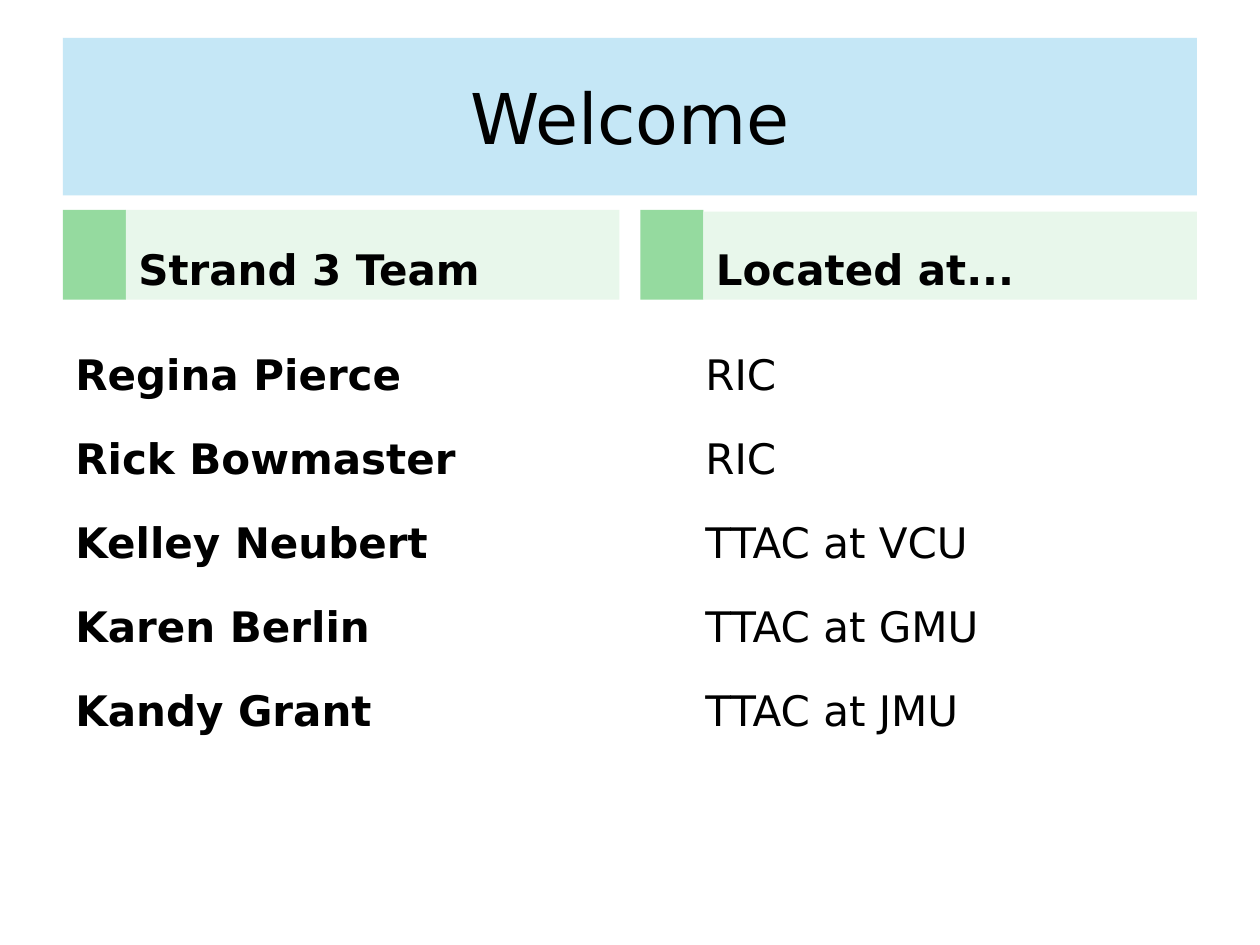
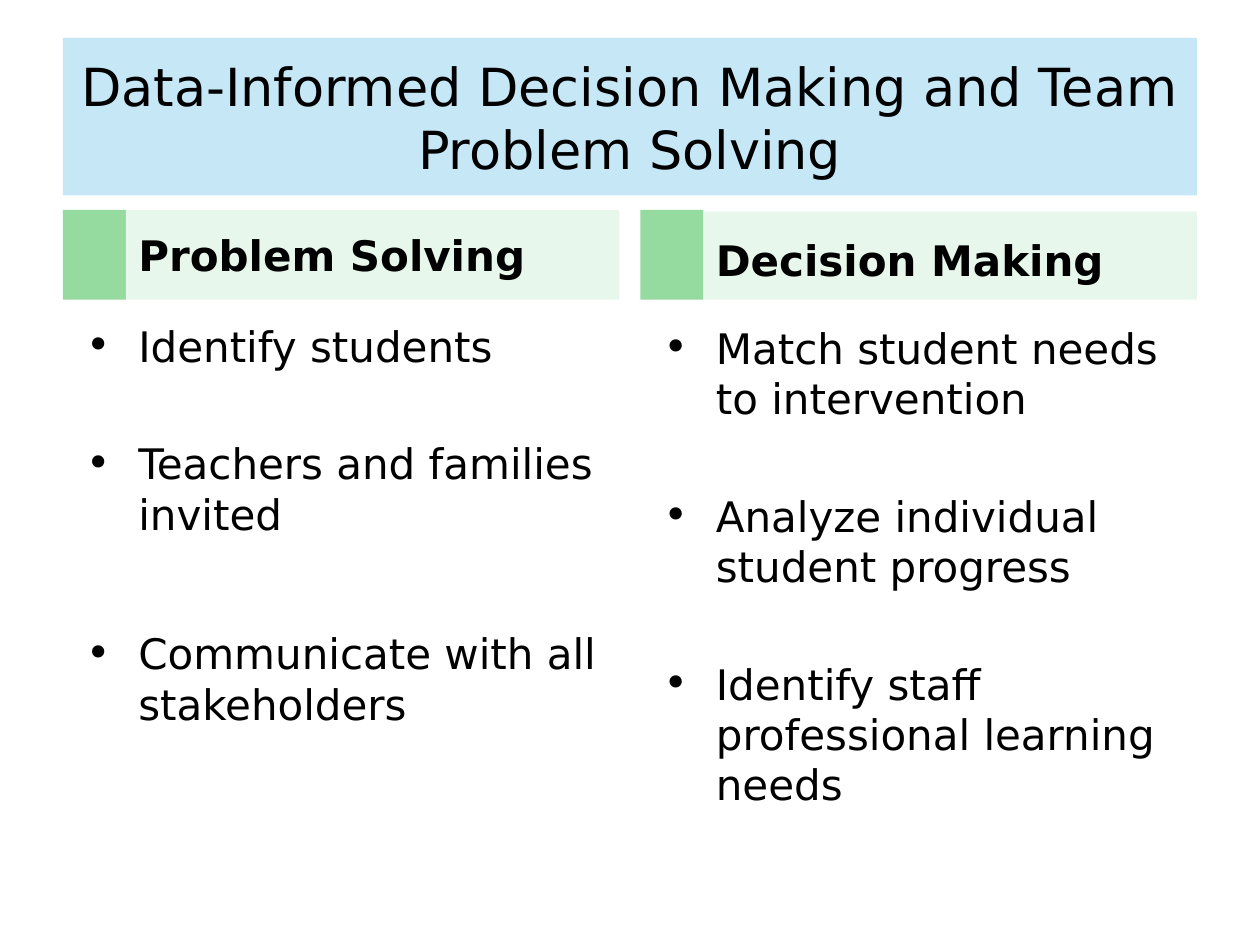
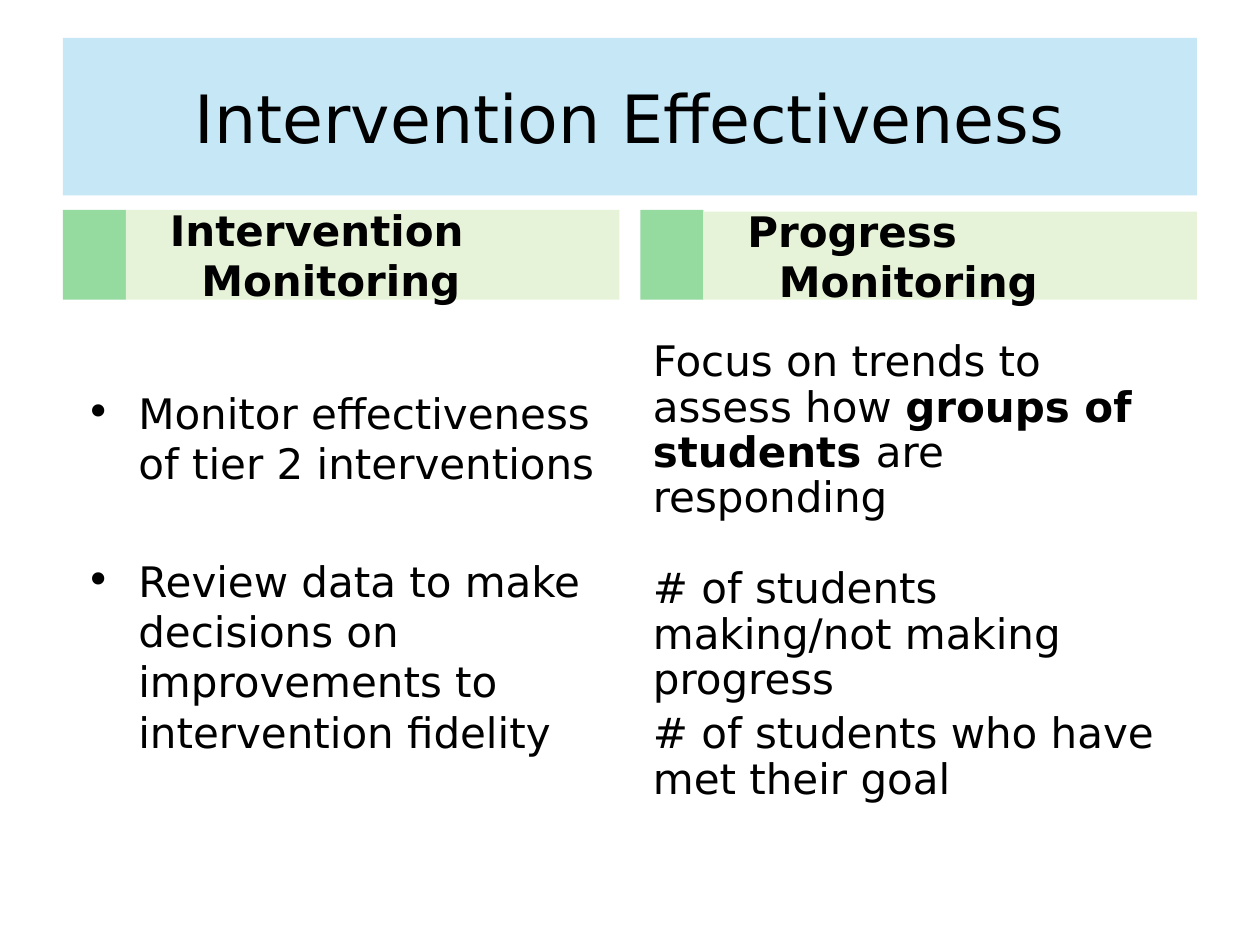
"""Build three two-column slides on a team, its problem solving and its interventions."""
from lxml.etree import SubElement
from pptx import Presentation
from pptx.dml.color import RGBColor
from pptx.enum.shapes import MSO_SHAPE
from pptx.enum.text import MSO_ANCHOR, PP_ALIGN
from pptx.oxml.ns import qn
from pptx.util import Pt

FONT = "DejaVu Sans"
TEXT, SKY, GREEN = "000000", "A9DCF2", "95DA9F"
MINT, LIME = "E8F7EB", "E7F3D8"
MARGIN, COLUMN_WIDTH, COLUMN_GAP, MARKER_WIDTH = 36, 318, 12, 36
COLUMN_LEFTS = [MARGIN, MARGIN + COLUMN_WIDTH + COLUMN_GAP]
HEADING_TOPS, HEADING_BOTTOM = [120, 121], 171.3
BODY_SIZE, BULLET_GAP = 24, 38.4


def add_band(slide, left, top, width, height, color):
    band = slide.shapes.add_shape(
        MSO_SHAPE.RECTANGLE, Pt(left), Pt(top), Pt(width), Pt(height))
    band.shadow.inherit = False
    band.fill.solid()
    band.fill.fore_color.rgb = RGBColor.from_string(color)
    band.line.fill.background()
    return band


def write(frame, paragraphs, anchor, size=BODY_SIZE, align=PP_ALIGN.LEFT,
          spacing=None, margin=0, indent=0, bullet=None, tab=None):
    frame.word_wrap = True
    frame.vertical_anchor = anchor
    for number, (gap, runs) in enumerate(paragraphs):
        paragraph = frame.add_paragraph() if number else frame.paragraphs[0]
        properties = paragraph._p.get_or_add_pPr()
        properties.set("marL", str(Pt(margin)))
        properties.set("indent", str(Pt(indent)))
        if bullet:
            SubElement(properties, qn("a:buFont"), typeface=FONT)
            SubElement(properties, qn("a:buChar"), char=bullet)
        if tab:
            properties.set("defTabSz", str(Pt(tab)))
            stops = SubElement(properties, qn("a:tabLst"))
            SubElement(stops, qn("a:tab"), pos=str(Pt(tab)), algn="l")
        paragraph.alignment = align
        if spacing:
            paragraph.line_spacing = spacing
        if gap:
            paragraph.space_before = Pt(gap)
        for text, bold in runs:
            run = paragraph.add_run()
            run.text = text
            run.font.name = FONT
            run.font.size = Pt(size)
            run.font.bold = bold
            run.font.color.rgb = RGBColor.from_string(TEXT)


team = [
    ("Regina Pierce", "RIC"),
    ("Rick Bowmaster", "RIC"),
    ("Kelley Neubert", "TTAC at VCU"),
    ("Karen Berlin", "TTAC at GMU"),
    ("Kandy Grant", "TTAC at JMU"),
]
team_lines = [(4.8 if row else 0, [(name + "\t", True), (place, False)])
              for row, (name, place) in enumerate(team)]
problem_solving = [
    (0, [("Identify students", False)]),
    (BULLET_GAP, [("Teachers and families invited", False)]),
    (51, [("Communicate with all stakeholders", False)]),
]
decision_making = [
    (0, [("Match student needs to intervention", False)]),
    (BULLET_GAP, [("Analyze individual student progress", False)]),
    (BULLET_GAP, [("Identify staff professional learning needs", False)]),
]
intervention_monitoring = [
    (0, [("Monitor effectiveness of tier 2 interventions", False)]),
    (BULLET_GAP, [("Review data to make decisions on improvements to "
                   "intervention fidelity", False)]),
]
progress_monitoring = [
    (0, [("Focus on trends to assess how ", False),
         ("groups of students ", True), ("are responding", False)]),
    (26, [("# of students making/not making progress", False)]),
    (5.2, [("# of students who have met their goal", False)]),
]

TOP, MIDDLE, BOTTOM = MSO_ANCHOR.TOP, MSO_ANCHOR.MIDDLE, MSO_ANCHOR.BOTTOM
bulleted = {"margin": 36, "indent": -30, "bullet": "•"}
hanging = {"margin": 36, "indent": -18}
pages = [
    ("Welcome", 40, MINT, BOTTOM,
     [("Strand 3 Team", {}), ("Located at...", {})],
     [(MARGIN, 181.2, 657, 311, TOP, team_lines, {"spacing": 1.5, "tab": 360})]),
    ("Data-Informed Decision Making and Team Problem Solving", 30, MINT, MIDDLE,
     [("Problem Solving", {}), ("Decision Making", {"spacing": 1.15})],
     [(COLUMN_LEFTS[0], 179.5, COLUMN_WIDTH, 258, TOP, problem_solving, bulleted),
      (COLUMN_LEFTS[1], 180.5, COLUMN_WIDTH, 258, TOP, decision_making, bulleted)]),
    ("Intervention Effectiveness", 38, LIME, MIDDLE,
     [("Intervention Monitoring", hanging), ("Progress Monitoring", hanging)],
     [(COLUMN_LEFTS[0], 171.3, COLUMN_WIDTH, 311, MIDDLE,
       intervention_monitoring, bulleted),
      (COLUMN_LEFTS[1], 171.3, COLUMN_WIDTH, 311, MIDDLE,
       progress_monitoring, {"spacing": 0.9})]),
]

deck = Presentation()
deck.slide_width, deck.slide_height = Pt(720), Pt(540)

for title, title_size, heading_color, heading_anchor, headings, bodies in pages:
    slide = deck.slides.add_slide(deck.slide_layouts[6])
    for left in COLUMN_LEFTS:
        add_band(slide, left, 120, MARKER_WIDTH, HEADING_BOTTOM - 120, GREEN)

    title_band = add_band(slide, MARGIN, 21.6, 648, 90, SKY)
    sky_fill = title_band._element.spPr.find(qn("a:solidFill"))
    SubElement(sky_fill[0], qn("a:alpha"), val="67000")
    write(title_band.text_frame, [(0, [(title, False)])], MIDDLE,
          size=title_size, align=PP_ALIGN.CENTER)

    for left, top, (heading, style) in zip(COLUMN_LEFTS, HEADING_TOPS, headings):
        heading_band = add_band(slide, left + MARKER_WIDTH, top,
                                COLUMN_WIDTH - MARKER_WIDTH,
                                HEADING_BOTTOM - top, heading_color)
        write(heading_band.text_frame, [(0, [(heading, True)])],
              heading_anchor, **style)

    for left, top, width, height, anchor, paragraphs, style in bodies:
        body = slide.shapes.add_textbox(Pt(left), Pt(top), Pt(width), Pt(height))
        write(body.text_frame, paragraphs, anchor, **style)

deck.save("out.pptx")
